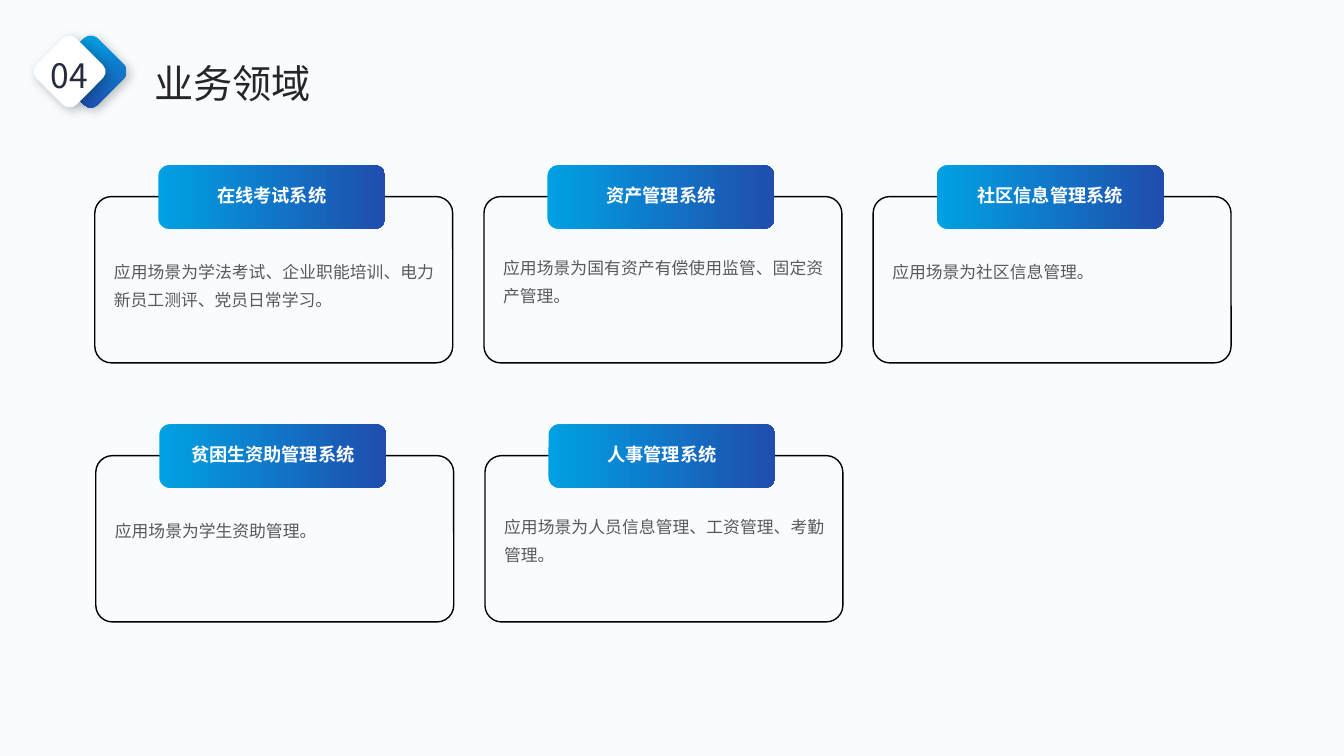
from dataclasses import dataclass

from lxml.etree import SubElement
from pptx import Presentation
from pptx.dml.color import RGBColor
from pptx.enum.shapes import MSO_SHAPE
from pptx.enum.text import MSO_ANCHOR, MSO_AUTO_SIZE, PP_ALIGN
from pptx.oxml.ns import qn
from pptx.util import Inches, Pt

FONT = "Noto Sans CJK SC"
COLORS = {
    "page": "F9FCFF", "white": "FFFFFF", "outline": "000000", "sky": "00A1E2",
    "royal": "204DAF", "title": "262626", "number": "282B3E", "body": "595959",
}

# Card grid, in inches
GRID_LEFT, GRID_TOP = 0.94, 1.95
COLUMN_STEP, ROW_STEP = 3.86, 2.57
ROW_SHIFT = 0.01
CARD_SIZE = (3.55, 1.65)
BODY_SIZE = (3.96, 1.33)
LABEL_SIZE = (2.25, 0.63)


@dataclass(frozen=True)
class TextStyle:
    size: float
    color: str
    align: PP_ALIGN
    spacing: object
    insets: tuple = (0.1, 0.05, 0.1, 0.05)
    anchor: MSO_ANCHOR = MSO_ANCHOR.TOP
    bold: bool = False


@dataclass(frozen=True)
class Card:
    column: int
    row: int
    label: str
    body: str
    body_drop: float = 0.18


STYLES = {
    "title": TextStyle(28, "title", PP_ALIGN.LEFT, 1.3),
    "number": TextStyle(24, "number", PP_ALIGN.CENTER, 1.14),
    "body": TextStyle(12, "body", PP_ALIGN.JUSTIFY, Pt(20), (0.39, 0.39, 0.39, 0.14)),
    "label": TextStyle(13, "white", PP_ALIGN.CENTER, 0.9, (0.04, 0.03, 0.04, 0.03),
                       MSO_ANCHOR.MIDDLE, True),
}

CARDS = [
    Card(0, 0, "在线考试系统", "应用场景为学法考试、企业职能培训、电力新员工测评、党员日常学习。"),
    Card(1, 0, "资产管理系统", "应用场景为国有资产有偿使用监管、固定资产管理。", 0.14),
    Card(2, 0, "社区信息管理系统", "应用场景为社区信息管理。"),
    Card(0, 1, "贫困生资助管理系统", "应用场景为学生资助管理。"),
    Card(1, 1, "人事管理系统", "应用场景为人员信息管理、工资管理、考勤管理。", 0.14),
]


def color(name: str) -> RGBColor:
    return RGBColor.from_string(COLORS[name])


def apply(target, values: dict) -> None:
    for name, value in values.items():
        setattr(target, name, value)


def write(shape, text: str, style: TextStyle) -> None:
    """Put one formatted paragraph in a shape."""
    frame = shape.text_frame
    left, top, right, bottom = map(Inches, style.insets)
    apply(frame, {
        "word_wrap": True, "auto_size": MSO_AUTO_SIZE.NONE,
        "vertical_anchor": style.anchor, "margin_left": left,
        "margin_top": top, "margin_right": right, "margin_bottom": bottom,
    })
    para = frame.paragraphs[0]
    apply(para, {"alignment": style.align, "line_spacing": style.spacing})
    span = para.add_run()
    span.text = text
    apply(span.font, {"name": FONT, "size": Pt(style.size), "bold": style.bold})
    span.font.color.rgb = color(style.color)
    SubElement(span.font._element, qn("a:ea"), typeface=FONT)


def add_text(page, place: tuple, text: str, style: TextStyle) -> None:
    write(page.shapes.add_textbox(*map(Inches, place)), text, style)


def add_round_box(page, place: tuple):
    box = page.shapes.add_shape(MSO_SHAPE.ROUNDED_RECTANGLE, *map(Inches, place))
    box.shadow.inherit = False
    box.line.fill.background()
    return box


def fill_gradient(box, angle: float) -> None:
    box.fill.gradient()
    box.fill.gradient_angle = angle
    for stop, name in zip(box.fill.gradient_stops, ("sky", "royal")):
        stop.color.rgb = color(name)


def add_soft_shadow(box) -> None:
    effects = box._element.spPr.find(qn("a:effectLst"))
    shadow = SubElement(effects, qn("a:outerShdw"), blurRad=str(Pt(8)), dist=str(Pt(3)),
                        dir="2700000", algn="tl", rotWithShape="0")
    tint = SubElement(shadow, qn("a:srgbClr"), val=COLORS["outline"])
    SubElement(tint, qn("a:alpha"), val="25000")


def add_diamond(page, left: float):
    box = add_round_box(page, (left, 0.43, 0.56, 0.56))
    box.rotation = 45
    add_soft_shadow(box)
    return box


def add_header(page) -> None:
    # Number badge
    fill_gradient(add_diamond(page, 0.62), 315)
    front = add_diamond(page, 0.41)
    front.fill.solid()
    front.fill.fore_color.rgb = color("white")
    add_text(page, (0.16, 0.44, 1.06, 0.56), "04", STYLES["number"])
    # Title
    title = page.shapes.title
    apply(title, {"left": Inches(1.43), "top": Inches(0.4),
                  "width": Inches(2.37), "height": Inches(0.65)})
    write(title, "业务领域", STYLES["title"])


def add_card(page, card: Card) -> None:
    left = GRID_LEFT + card.column * COLUMN_STEP + card.row * ROW_SHIFT
    top = GRID_TOP + card.row * ROW_STEP
    # Outline
    frame = add_round_box(page, (left, top, *CARD_SIZE))
    frame.adjustments[0] = 0.1
    frame.fill.background()
    frame.line.color.rgb = color("outline")
    frame.line.width = Pt(1)
    # Description
    add_text(page, (left - 0.2, top + card.body_drop, *BODY_SIZE), card.body, STYLES["body"])
    # Label across the top edge
    label = add_round_box(page, (left + 0.63, top - 0.31, *LABEL_SIZE))
    fill_gradient(label, 0)
    write(label, card.label, STYLES["label"])


def main() -> None:
    deck = Presentation()
    apply(deck, {"slide_width": Inches(13.33), "slide_height": Inches(7.5)})
    page = deck.slides.add_slide(deck.slide_layouts[5])
    page.background.fill.solid()
    page.background.fill.fore_color.rgb = color("page")
    add_header(page)
    for card in CARDS:
        add_card(page, card)
    deck.save("out.pptx")


if __name__ == "__main__":
    main()
